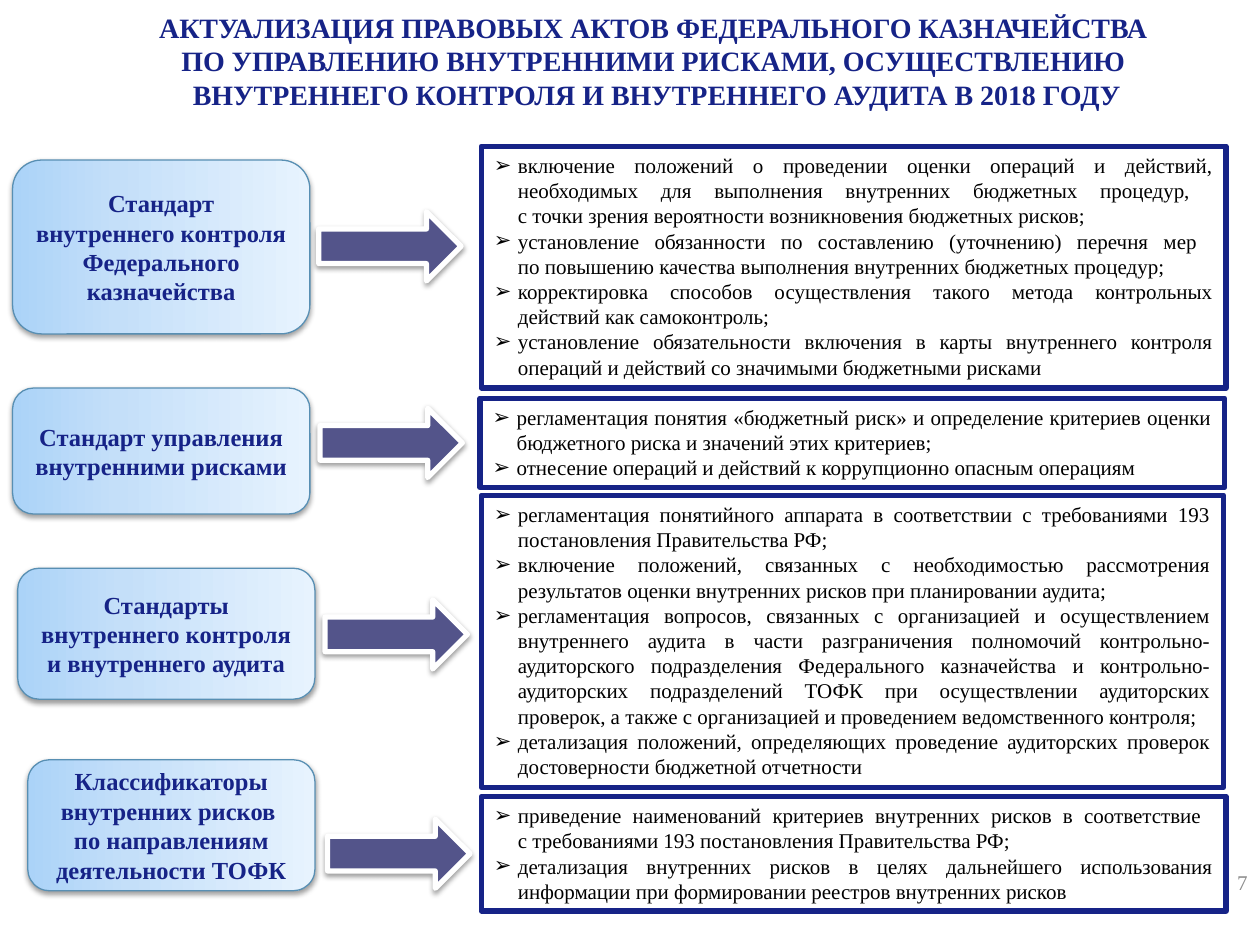
from copy import deepcopy

from pptx import Presentation
from pptx.dml.color import RGBColor
from pptx.enum.shapes import MSO_SHAPE as Preset
from pptx.enum.text import MSO_ANCHOR as Anchor, MSO_AUTO_SIZE as AutoSize, PP_ALIGN as Align
from pptx.oxml import parse_xml
from pptx.oxml.ns import nsdecls, qn
from pptx.util import Inches, Pt

NAVY, BLACK, WHITE, GRAY = "162387", "000000", "FFFFFF", "8C8C8C"
PURPLE, STEEL = "53548A", "588FB3"
LABEL_STOPS = [(0, "ABD3F8"), (0.35, "C4DFF9"), (1, "E7F3FE")]
FONT = "Times New Roman"


def color(value):
    return RGBColor.from_string(value)


def write(box, lines, size=12, ink=BLACK, bold=False, align=Align.CENTER,
          anchor=Anchor.MIDDLE, bullet=None):
    frame = box.text_frame
    frame.word_wrap = True
    frame.auto_size = AutoSize.NONE
    frame.vertical_anchor = anchor
    for index, line in enumerate(lines):
        para = frame.add_paragraph() if index else frame.paragraphs[0]
        para.text = line
        para.alignment = align
        para.space_before = Pt(0)
        if bullet:
            props = para._p.get_or_add_pPr()
            props.set("marL", str(Inches(0.19)))
            props.set("indent", str(-Inches(0.19)))
            props.append(parse_xml(f'<a:buChar {nsdecls("a")} char="{bullet}"/>'))
        for span in para.runs:
            span.font.name = FONT
            span.font.size = Pt(size)
            span.font.bold = bold
            span.font.color.rgb = color(ink)
        # Line breaks take the format of the text around them
        for line_break in para._p.findall(qn("a:br")):
            line_break.append(deepcopy(para._p.find(qn("a:r")).rPr))


class SlideBuilder:
    def __init__(self, page):
        self.page = page

    def place(self, box, left, top, width, height):
        box.left, box.top = Inches(left), Inches(top)
        box.width, box.height = Inches(width), Inches(height)

    def outline(self, box, ink, width):
        box.line.color.rgb = color(ink)
        box.line.width = Pt(width)

    def shape(self, preset, area, ink, width):
        box = self.page.shapes.add_shape(preset, *map(Inches, area))
        self.outline(box, ink, width)
        box.shadow.inherit = False
        box._element.spPr.find(qn("a:effectLst")).append(parse_xml(
            f'<a:outerShdw {nsdecls("a")} blurRad="{Pt(3.1)}" dist="{Pt(1.6)}" '
            'dir="5400000" rotWithShape="0"><a:srgbClr val="000000">'
            '<a:alpha val="38000"/></a:srgbClr></a:outerShdw>'))
        return box

    def title(self, area, lines):
        box = self.page.shapes.title
        self.place(box, *area)
        write(box, lines, size=16, ink=NAVY, bold=True, anchor=Anchor.TOP)

    def label(self, area, lines):
        box = self.shape(Preset.ROUNDED_RECTANGLE, area, STEEL, 0.75)
        box.fill.gradient()
        box.fill.gradient_angle = 0
        stop_list = box._element.spPr.find(".//" + qn("a:gsLst"))
        stop_list.append(deepcopy(stop_list[-1]))
        for stop, (position, tint) in zip(box.fill.gradient_stops, LABEL_STOPS):
            stop.position = position
            stop.color.rgb = color(tint)
        write(box, lines, size=14, ink=NAVY, bold=True)

    def arrow(self, left, top):
        box = self.shape(Preset.RIGHT_ARROW, (left, top, 1.13, 0.55), WHITE, 3)
        box.fill.solid()
        box.fill.fore_color.rgb = color(PURPLE)

    def bullets(self, box, area, lines):
        self.place(box, *area)
        self.outline(box, NAVY, 3)
        write(box, lines, align=Align.JUSTIFY, anchor=Anchor.TOP, bullet="➢")

    def page_number(self, area, number):
        box = self.page.shapes.add_textbox(*map(Inches, area))
        write(box, [number], ink=GRAY, align=Align.RIGHT)


TITLE = [
    "АКТУАЛИЗАЦИЯ ПРАВОВЫХ АКТОВ ФЕДЕРАЛЬНОГО КАЗНАЧЕЙСТВА ",
    "ПО УПРАВЛЕНИЮ ВНУТРЕННИМИ РИСКАМИ, ОСУЩЕСТВЛЕНИЮ ",
    "ВНУТРЕННЕГО КОНТРОЛЯ И ВНУТРЕННЕГО АУДИТА В 2018 ГОДУ",
]

# Each row: label area and text, arrow corner, list area and items
ROWS = [
    ((0.1, 1.27, 2.36, 1.38),
     ["Стандарт", "внутреннего контроля", "Федерального казначейства"],
     (2.53, 1.68), (3.82, 1.16, 5.91, 1.92),
     ["включение положений о проведении оценки операций и действий, необходимых для "
      "выполнения внутренних бюджетных процедур, \n"
      "с точки зрения вероятности возникновения бюджетных рисков;",
      "установление обязанности по составлению (уточнению) перечня мер \n"
      "по повышению качества выполнения внутренних бюджетных процедур;",
      "корректировка способов осуществления такого метода контрольных действий "
      "как самоконтроль;",
      "установление обязательности включения в карты внутреннего контроля операций "
      "и действий со значимыми бюджетными рисками"]),
    ((0.1, 3.08, 2.36, 1),
     ["Стандарт управления внутренними рисками"],
     (2.54, 3.24), (3.81, 3.16, 5.91, 0.71),
     ["регламентация понятия «бюджетный риск» и определение критериев оценки "
      "бюджетного риска и значений этих критериев;",
      "отнесение операций и действий к коррупционно опасным операциям"]),
    ((0.14, 4.51, 2.36, 1.04),
     ["Стандарты внутреннего контроля и внутреннего аудита"],
     (2.58, 4.76), (3.82, 3.93, 5.89, 2.32),
     ["регламентация понятийного аппарата в соответствии с требованиями 193 "
      "постановления Правительства РФ;",
      "включение положений, связанных с необходимостью рассмотрения результатов "
      "оценки внутренних рисков при планировании аудита;",
      "регламентация вопросов, связанных с организацией и осуществлением внутреннего "
      "аудита в части разграничения полномочий контрольно-аудиторского подразделения "
      "Федерального казначейства и контрольно-аудиторских подразделений ТОФК при "
      "осуществлении аудиторских проверок, а также с организацией и проведением "
      "ведомственного контроля;",
      "детализация положений, определяющих проведение аудиторских проверок "
      "достоверности бюджетной отчетности "]),
    ((0.22, 6.03, 2.28, 1.04),
     ["Классификаторы внутренних рисков ", "по направлениям деятельности ТОФК"],
     (2.6, 6.5), (3.82, 6.32, 5.91, 0.91),
     ["приведение наименований критериев внутренних рисков в соответствие \n"
      "с требованиями 193 постановления Правительства РФ;",
      "детализация внутренних рисков в целях дальнейшего использования информации "
      "при формировании реестров внутренних рисков"]),
]


def main():
    deck = Presentation()
    deck.slide_width, deck.slide_height = Inches(10), Inches(7.5)
    # The comparison layout has a title and four body placeholders
    page = deck.slides.add_slide(deck.slide_layouts[4])
    builder = SlideBuilder(page)

    # Heading and page number
    builder.title((0.41, 0.03, 9.61, 0.91), TITLE)
    builder.page_number((7.67, 6.8, 2.33, 0.4), "7")

    # Documents and their changes
    bodies = list(page.placeholders)[1:]
    for body, (label_area, label, corner, list_area, items) in zip(bodies, ROWS):
        builder.label(label_area, label)
        builder.arrow(*corner)
        builder.bullets(body, list_area, items)

    deck.save("out.pptx")


if __name__ == "__main__":
    main()
